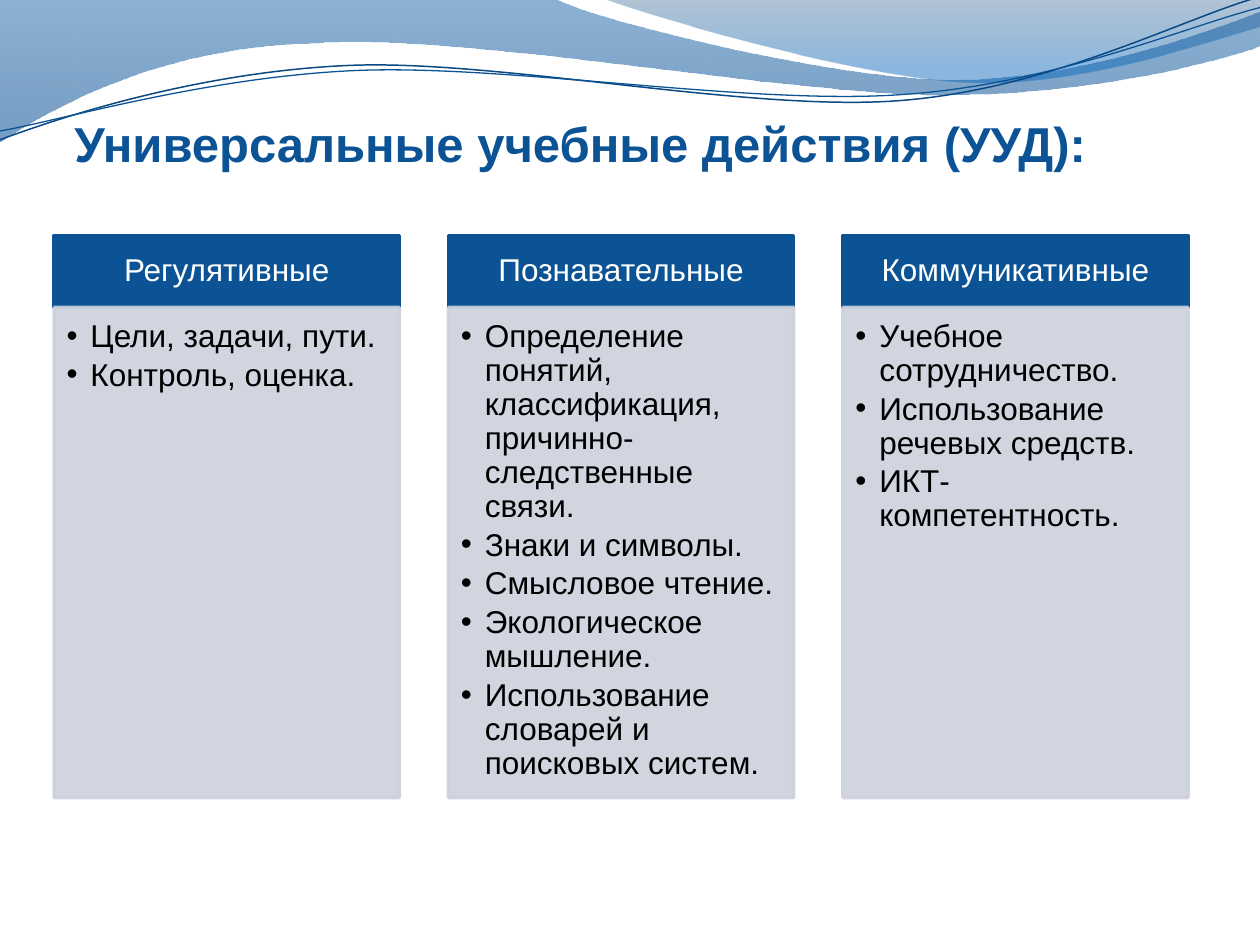
"""Build a slide listing the universal learning actions in three columns."""
import pptx
import pptx.dml.color
import pptx.enum.shapes
import pptx.enum.text
import pptx.oxml.ns
import pptx.util
from lxml import etree

Inches, Pt = pptx.util.Inches, pptx.util.Pt
RGB = pptx.dml.color.RGBColor.from_string
qn = pptx.oxml.ns.qn
ANCHOR, ALIGN = pptx.enum.text.MSO_ANCHOR, pptx.enum.text.PP_ALIGN
COLORS = {
    "blue": "0B5394", "line": "0A4983", "panel": "CCD1DC",
    "white": "FFFFFF", "black": "000000",
    "wave_top": "00539E", "wave_bottom": "004C90",
    "crest_top": "003E76", "crest_bottom": "0063BC",
}


def add_curve(shapes, start, segments, close):
    """Draw straight segments (2 numbers) and cubic curves (6 numbers)."""
    builder = shapes.build_freeform(Inches(start[0]), Inches(start[1]), scale=1.0)
    ends = [(Inches(seg[-2]), Inches(seg[-1])) for seg in segments]
    builder.add_line_segments(ends, close=close)
    sp = builder.convert_to_shape()
    sp.shadow.inherit = False
    for node, seg in zip(list(sp.element.iter(qn("a:lnTo"))), segments):
        if len(seg) == 6:
            curve = etree.Element(qn("a:cubicBezTo"))
            for x, y in zip(seg[::2], seg[1::2]):
                pt = etree.SubElement(curve, qn("a:pt"))
                pt.set("x", str(Inches(x) - sp.left))
                pt.set("y", str(Inches(y) - sp.top))
            node.getparent().replace(node, curve)
    return sp


def set_alphas(sp, alphas):
    """Give the shape's colours, in order, their opacity in percent."""
    for clr, alpha in zip(sp.element.spPr.iter(qn("a:srgbClr")), alphas):
        etree.SubElement(clr, qn("a:alpha")).set("val", str(alpha * 1000))


prs = pptx.Presentation()
prs.slide_width, prs.slide_height = Inches(10), Inches(7.5)
slide = prs.slides.add_slide(prs.slide_layouts[5])
shapes = slide.shapes

waves = [
    ((0, 0), [(4.4, -0.01), (4.76, 0.17, 6.64, 0.63, 7.58, 0.63),
              (8.53, 0.63, 9.58, 0.26, 10, 0.09), (10.01, 0.36),
              (9.83, 0.44, 8.7, 0.76, 7.46, 0.75),
              (6.22, 0.75, 3.82, 0.28, 2.57, 0.34),
              (1.29, 0.36, 0.46, 0.83, -0.01, 1.13)],
     [("wave_top", 0, 45), ("wave_bottom", 1, 55)]),
    ((4.79, -0.01), [(5.09, 0.11, 6.82, 0.62, 7.69, 0.65),
                     (8.56, 0.69, 9.61, 0.32, 10, 0.21), (10, 0)],
     [("crest_top", 0, 30), ("crest_bottom", 0.8, 45)]),
]
for start, segments, stops in waves:
    sp = add_curve(shapes, start, segments, True)
    sp.fill.gradient()
    sp.fill.gradient_angle = 270
    for stop, (color, position, alpha) in zip(sp.fill.gradient_stops, stops):
        stop.color.rgb = RGB(COLORS[color])
        stop.position = position
    set_alphas(sp, [alpha for color, position, alpha in stops])
    sp.line.fill.background()

strands = [
    ((0, 1.11), [(0.48, 0.93, 1.58, 0.57, 2.77, 0.52),
                 (3.95, 0.47, 5.93, 0.89, 7.13, 0.8),
                 (8.33, 0.71, 9.38, 0.15, 9.98, -0.02)], "line", 0.85),
    ((0, 1.04), [(0.47, 0.96, 1.64, 0.61, 2.83, 0.56),
                 (4.03, 0.51, 5.97, 0.84, 7.17, 0.75),
                 (8.36, 0.67, 9.41, 0.21, 10, 0.06)], "blue", 0.75),
]
for start, segments, color, width in strands:
    sp = add_curve(shapes, start, segments, False)
    sp.fill.background()
    sp.line.color.rgb = RGB(COLORS[color])
    sp.line.width = Pt(width)

title = shapes.title
title.element.getparent().append(title.element)
title.left, title.top = Inches(0.59), Inches(0.12)
title.width, title.height = Inches(9), Inches(1.25)
tf = title.text_frame
tf.auto_size = pptx.enum.text.MSO_AUTO_SIZE.NONE
tf.vertical_anchor = ANCHOR.BOTTOM
tf.margin_left = tf.margin_right = tf.margin_bottom = 0
tf.margin_top = Inches(0.05)
p = tf.paragraphs[0]
p.alignment = ALIGN.LEFT
r = p.add_run()
r.text = "Универсальные учебные действия (УУД):"
r.font.name, r.font.size, r.font.bold = "Arial", Pt(28), True
r.font.color.rgb = RGB(COLORS["blue"])

columns = [
    ("Регулятивные", ["Цели, задачи, пути.", "Контроль, оценка."]),
    ("Познавательные", [
        "Определение понятий, классификация, причинно-следственные связи.",
        "Знаки и символы.", "Смысловое чтение.", "Экологическое мышление.",
        "Использование словарей и поисковых систем."]),
    ("Коммуникативные", [
        "Учебное сотрудничество.", "Использование речевых средств.",
        "ИКТ-компетентность."]),
]
for i, (heading, items) in enumerate(columns):
    left = 0.43 + i * 3.13
    boxes = [
        (1.87, 0.57, "blue", "white", [heading], (0.14, 0.08, 0.14, 0.08)),
        (2.44, 3.89, "panel", "black", items, (0.1, 0.1, 0.14, 0.16)),
    ]
    for top, height, fill, ink, texts, insets in boxes:
        is_panel = fill == "panel"
        frame = [Inches(v) for v in (left, top, 2.74, height)]
        sp = shapes.add_shape(pptx.enum.shapes.MSO_SHAPE.RECTANGLE, *frame)
        sp.shadow.inherit = False
        sp.fill.solid()
        sp.fill.fore_color.rgb = RGB(COLORS[fill])
        sp.line.color.rgb = RGB(COLORS[fill])
        sp.line.width = Pt(2)
        if is_panel:
            set_alphas(sp, [90, 90])
        tf = shapes.add_textbox(*frame).text_frame
        tf.word_wrap = True
        tf.vertical_anchor = ANCHOR.TOP if is_panel else ANCHOR.MIDDLE
        tf.margin_left, tf.margin_top, tf.margin_right, tf.margin_bottom = map(Inches, insets)
        for n, text in enumerate(texts):
            p = tf.add_paragraph() if n else tf.paragraphs[0]
            p.alignment = ALIGN.LEFT if is_panel else ALIGN.CENTER
            p.line_spacing = 0.9
            if is_panel:
                p.level = 1
                p.space_after = Pt(2.7)
                pPr = p._p.get_or_add_pPr()
                pPr.set("marL", str(Inches(0.19)))
                pPr.set("indent", str(-Inches(0.19)))
                etree.SubElement(pPr, qn("a:buFont")).set("typeface", "Arial")
                etree.SubElement(pPr, qn("a:buChar")).set("char", "•")
            r = p.add_run()
            r.text = text
            r.font.name, r.font.size = "Arial", Pt(18)
            r.font.color.rgb = RGB(COLORS[ink])

prs.save("out.pptx")
